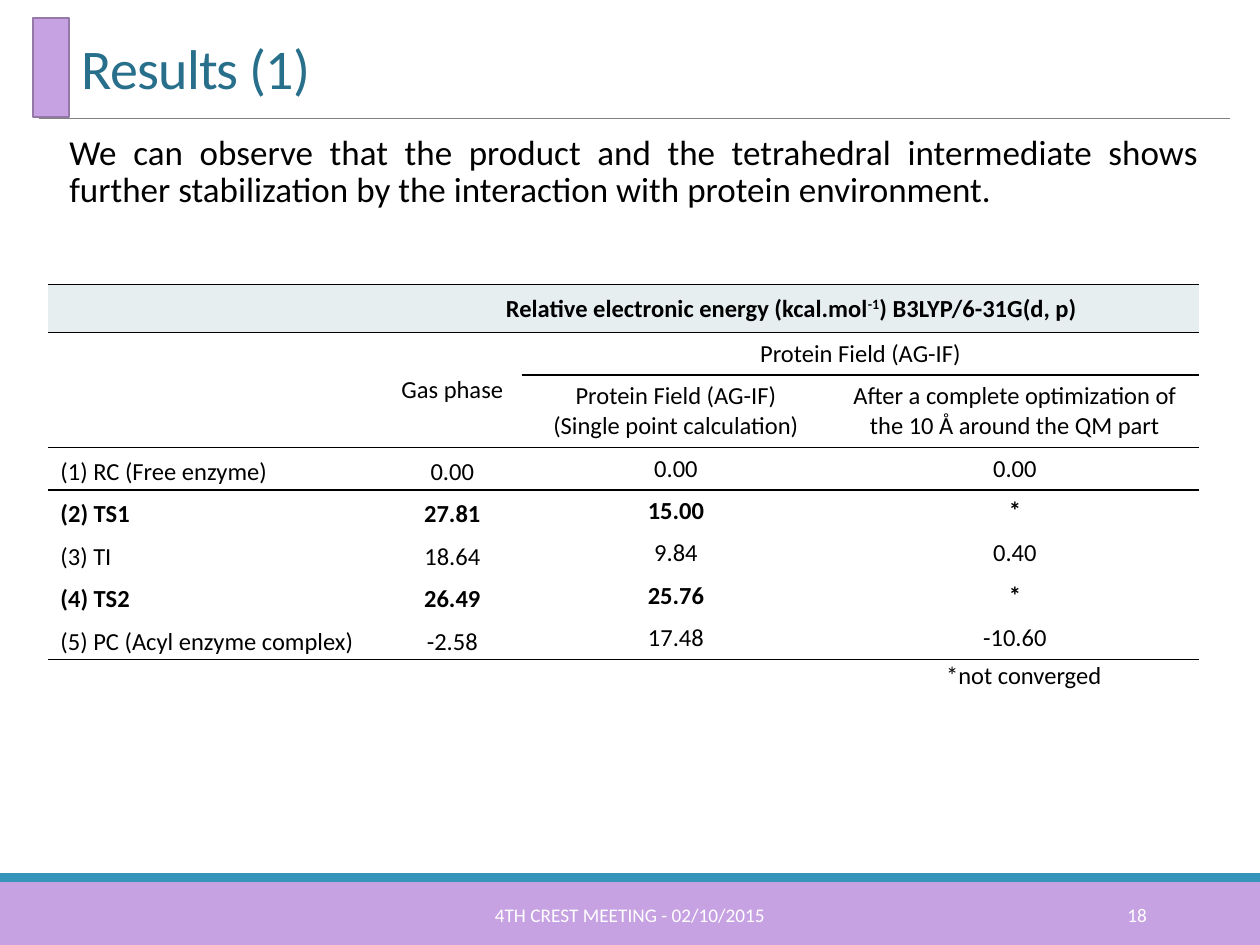
from dataclasses import dataclass
from typing import Any

from lxml.etree import SubElement
from pptx import Presentation
from pptx.dml.color import RGBColor as RGB
from pptx.enum.shapes import MSO_CONNECTOR as CONN, MSO_SHAPE as SHAPE
from pptx.enum.text import MSO_ANCHOR as ANCHOR, MSO_AUTO_SIZE as FIT, PP_ALIGN as ALIGN
from pptx.oxml.ns import qn
from pptx.util import Inches, Pt


@dataclass(frozen=True)
class Theme:
    font: str = "Calibri"
    title: str = "276F8B"
    ink: str = "000000"
    white: str = "FFFFFF"
    lilac: str = "C7A2E3"
    lilac_edge: str = "9378A8"
    teal: str = "3494BA"
    rule: str = "808080"
    header: str = "E6EEF0"
    title_pt: float = 32
    body_pt: float = 20
    table_pt: float = 14
    footer_pt: float = 11


@dataclass(frozen=True)
class Box:
    x: float
    y: float
    w: float
    h: float

    @property
    def emu(self) -> tuple:
        return tuple(Inches(v) for v in (self.x, self.y, self.w, self.h))


@dataclass(frozen=True)
class Bar:
    box: Box
    fill: str
    edge: str = ""


@dataclass(frozen=True)
class Label:
    text: str
    box: Box
    size: float
    color: str
    align: Any
    anchor: Any = ANCHOR.MIDDLE
    wrap: bool = True


T = Theme()
NO_STYLE = "{2D5ABB26-0587-4C30-8999-92F81FD0307C}"

BARS = [
    Bar(Box(0, 7, 10, 0.5), T.lilac),
    Bar(Box(0, 6.93, 10, 0.07), T.teal),
    Bar(Box(0.26, 0.14, 0.29, 0.79), T.lilac, T.lilac_edge),
]
LABELS = [
    Label("4TH CREST MEETING - 02/10/2015", Box(3.02, 7.06, 3.96, 0.4),
          T.footer_pt, T.white, ALIGN.CENTER),
    Label("18", Box(8.12, 7.06, 1.08, 0.4), T.footer_pt, T.white, ALIGN.RIGHT),
    Label("*not converged", Box(7.4, 5.19, 1.45, 0.34),
          T.table_pt, T.ink, ALIGN.CENTER, ANCHOR.TOP, False),
]

# Table content, column widths and merged ranges (first cell, last cell)
COLS = [2.66, 1.1, 2.45, 2.93]
ROWS = [
    ["", "Relative electronic energy (kcal.mol^-1^) B3LYP/6-31G(d, p)", "", ""],
    ["", "Gas phase", "Protein Field (AG-IF)", ""],
    ["", "", "Protein Field (AG-IF)\n(Single point calculation)",
     "After a complete optimization of the 10 Å around the QM part"],
    ["(1) RC (Free enzyme)", "0.00", "0.00", "0.00"],
    ["(2) TS1", "27.81", "15.00", "*"],
    ["(3) TI", "18.64", "9.84", "0.40"],
    ["(4) TS2", "26.49", "25.76", "*"],
    ["(5) PC (Acyl enzyme complex)", "-2.58", "17.48", "-10.60"],
]
MERGES = [((0, 1), (0, 3)), ((1, 0), (2, 0)), ((1, 1), (2, 1)), ((1, 2), (1, 3))]
FIRST_DATA = 3
BOLD_ROWS = {0, 4, 6}


def apply(obj: Any, formats: dict) -> None:
    for name, value in formats.items():
        setattr(obj, name, value)


def add_run(p: Any, text: str, size: float, color: str, bold: bool = False) -> Any:
    r = p.add_run()
    r.text = text
    apply(r.font, {"name": T.font, "size": Pt(size), "bold": bold})
    r.font.color.rgb = RGB.from_string(color)
    return r


def add_bar(slide: Any, bar: Bar) -> None:
    sp = slide.shapes.add_shape(SHAPE.RECTANGLE, *bar.box.emu)
    sp.shadow.inherit = False
    sp.fill.solid()
    sp.fill.fore_color.rgb = RGB.from_string(bar.fill)
    if bar.edge:
        sp.line.color.rgb = RGB.from_string(bar.edge)
        sp.line.width = Pt(1.25)
    else:
        sp.line.fill.background()


def add_label(slide: Any, label: Label) -> None:
    tf = slide.shapes.add_textbox(*label.box.emu).text_frame
    apply(tf, {"word_wrap": label.wrap, "vertical_anchor": label.anchor})
    p = tf.paragraphs[0]
    p.alignment = label.align
    add_run(p, label.text, label.size, label.color)


def fill_placeholder(ph: Any, box: Box, text: str, size: float, color: str,
                     frame: dict, para: dict) -> Any:
    apply(ph, dict(zip(("left", "top", "width", "height"), box.emu)))
    tf = ph.text_frame
    apply(tf, {"auto_size": FIT.NONE, "word_wrap": True, **frame})
    p = tf.paragraphs[0]
    apply(p, para)
    return add_run(p, text, size, color)


def has_rule_above(row: int, col: int) -> bool:
    return row in (0, 1, FIRST_DATA, len(ROWS)) or (row == 2 and col >= 2)


def add_border(cell: Any, side: str) -> None:
    ln = SubElement(cell._tc.get_or_add_tcPr(), qn(f"a:{side}"), w=str(Pt(1)))
    SubElement(SubElement(ln, qn("a:solidFill")), qn("a:srgbClr"), val=T.ink)


def format_cell(cell: Any, row: int, col: int) -> None:
    for side, edge in (("lnT", row), ("lnB", row + 1)):
        if has_rule_above(edge, col):
            add_border(cell, side)
    if row == 0:
        cell.fill.solid()
        cell.fill.fore_color.rgb = RGB.from_string(T.header)
    else:
        cell.fill.background()
    tight = row >= FIRST_DATA and col < 2
    cell.vertical_anchor = ANCHOR.BOTTOM if tight else ANCHOR.MIDDLE
    for i, line in enumerate(ROWS[row][col].split("\n")):
        tf = cell.text_frame
        p = tf.add_paragraph() if i else tf.paragraphs[0]
        p.alignment = ALIGN.LEFT if tight and col == 0 else ALIGN.CENTER
        if tight:
            p.line_spacing = 0.5
            p.space_before = Pt(6 if row == FIRST_DATA else 0)
        # Text between carets is superscript
        for k, part in enumerate(line.split("^")):
            r = add_run(p, part, T.table_pt, T.ink, row in BOLD_ROWS)
            if k % 2:
                r.font._element.set("baseline", "30000")


def add_energy_table(slide: Any) -> None:
    box = Box(0.38, 2.26, sum(COLS), 2.9)
    gf = slide.shapes.add_table(len(ROWS), len(COLS), *box.emu)
    tbl = gf.table
    gf._element.find(f".//{qn('a:tableStyleId')}").text = NO_STYLE
    apply(tbl, {"first_row": False, "horz_banding": False})
    for column, width in zip(tbl.columns, COLS):
        column.width = Inches(width)
    for i, row in enumerate(tbl.rows):
        row.height = Inches(0.57 if i == 2 else 0.33)
    for (r0, c0), (r1, c1) in MERGES:
        tbl.cell(r0, c0).merge(tbl.cell(r1, c1))
    for row in range(len(ROWS)):
        for col in range(len(COLS)):
            format_cell(tbl.cell(row, col), row, col)


def main() -> None:
    prs = Presentation()
    apply(prs, {"slide_width": Inches(10), "slide_height": Inches(7.5)})
    slide = prs.slides.add_slide(prs.slide_layouts[1])

    # Bars and title rule
    for bar in BARS:
        add_bar(slide, bar)
    rule = slide.shapes.add_connector(
        CONN.STRAIGHT, Inches(0.31), Inches(0.94), Inches(9.76), Inches(0.94))
    rule.line.color.rgb = RGB.from_string(T.rule)
    rule.line.width = Pt(0.5)
    SubElement(rule._element.spPr, qn("a:effectLst"))

    # Title and body
    r = fill_placeholder(slide.shapes.title, Box(0.55, 0.31, 8.96, 0.54),
                         "Results (1)", T.title_pt, T.title,
                         {"vertical_anchor": ANCHOR.BOTTOM},
                         {"alignment": ALIGN.LEFT, "line_spacing": 0.85})
    r.font._element.set("spc", "-50")
    body = slide.placeholders[1]
    fill_placeholder(body, Box(0.55, 1.02, 8.96, 5.7),
                     "We can observe that the product and the tetrahedral intermediate shows "
                     "further stabilization by the interaction with protein environment.",
                     T.body_pt, T.ink, {"margin_left": 0, "margin_right": 0},
                     {"alignment": ALIGN.JUSTIFY, "line_spacing": 0.9,
                      "space_before": Pt(12), "space_after": Pt(2)})
    pPr = body.text_frame.paragraphs[0]._p.get_or_add_pPr()
    pPr.set("marL", "0")
    pPr.set("indent", "0")
    SubElement(pPr, qn("a:buNone"))

    # Table, footnote and footer
    add_energy_table(slide)
    for label in LABELS:
        add_label(slide, label)
    prs.save("out.pptx")


if __name__ == "__main__":
    main()
